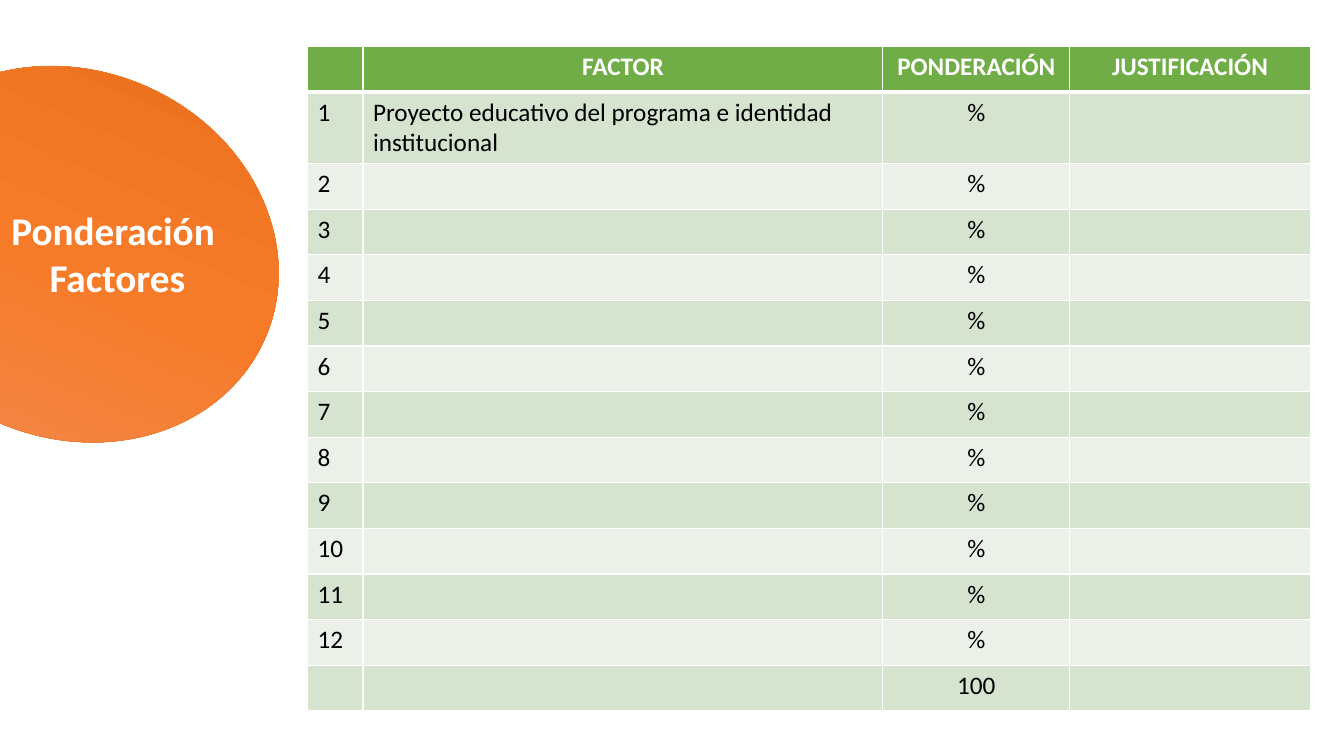
import copy
import lxml.etree
import pptx
import pptx.dml.color
import pptx.enum.shapes
import pptx.enum.text
import pptx.oxml.ns
import pptx.util

Cm = pptx.util.Cm
Pt = pptx.util.Pt
rgb = pptx.dml.color.RGBColor.from_string
qn = pptx.oxml.ns.qn
ALIGN = pptx.enum.text.PP_ALIGN

THEME = {
    "font": "Calibri",
    "title_size": 28,
    "table_size": 18,
    "white": "FFFFFF",
    "black": "000000",
    "header": "70AD47",
    "bands": ("D5E3CF", "EBF1E9"),
    "outline": "ED7D31",
    "gradient": ((0, "F18C57"), (0.5, "F67B28"), (1, "E56C19")),
}


def write(paragraph, text, size, color, bold, align):
    paragraph.alignment = align
    run = paragraph.add_run()
    run.text = text
    run.font.name = THEME["font"]
    run.font.size = Pt(size)
    run.font.bold = bold
    run.font.color.rgb = rgb(color)


def add_border(cell, side, width):
    line = lxml.etree.SubElement(cell._tc.get_or_add_tcPr(), qn("a:" + side), w=str(Pt(width)))
    fill = lxml.etree.SubElement(line, qn("a:solidFill"))
    lxml.etree.SubElement(fill, qn("a:srgbClr"), val=THEME["white"])


presentation = pptx.Presentation()
presentation.slide_width = Cm(33.87)
presentation.slide_height = Cm(19.05)
slide = presentation.slides.add_slide(presentation.slide_layouts[5])

rows = [("", "FACTOR", "PONDERACIÓN", "JUSTIFICACIÓN")]
rows += [(str(number), "", "%", "") for number in range(1, 13)]
rows[1] = ("1", "Proyecto educativo del programa e identidad institucional", "%", "")
rows.append(("", "", "100", ""))
widths = (1.4, 13.1, 4.71, 6.06)
heights = [1.15, 1.77] + [1.15] * 12

factors = slide.shapes.add_table(
    len(rows), len(widths), Cm(7.75), Cm(1.17), Cm(sum(widths)), Cm(sum(heights))
).table
for column, width in zip(factors.columns, widths):
    column.width = Cm(width)
for index, (texts, height) in enumerate(zip(rows, heights)):
    factors.rows[index].height = Cm(height)
    heading = index == 0
    background = THEME["header"] if heading else THEME["bands"][(index - 1) % 2]
    for position, text in enumerate(texts):
        cell = factors.cell(index, position)
        for side in ("lnL", "lnR", "lnT", "lnB"):
            thick = (index, side) in ((0, "lnB"), (1, "lnT"))
            add_border(cell, side, 3 if thick else 1)
        cell.fill.solid()
        cell.fill.fore_color.rgb = rgb(background)
        if text:
            write(
                cell.text_frame.paragraphs[0],
                text,
                THEME["table_size"],
                THEME["white"] if heading else THEME["black"],
                heading,
                ALIGN.CENTER if heading or position == 2 else ALIGN.LEFT,
            )

disc = slide.shapes.add_shape(
    pptx.enum.shapes.MSO_SHAPE.CHORD, Cm(-3.5), Cm(1.78), Cm(10.62), Cm(9.25)
)
disc.rotation = 203.3
disc.adjustments[0] = 26.92
disc.adjustments[1] = 162
disc.shadow.inherit = False
disc.line.color.rgb = rgb(THEME["outline"])
disc.line.width = Pt(0.5)
disc.fill.gradient()
disc.fill.gradient_angle = 270
stop_list = disc._element.spPr.find(qn("a:gradFill")).find(qn("a:gsLst"))
stop_list.append(copy.deepcopy(stop_list[-1]))
for stop, (place, color) in zip(disc.fill.gradient_stops, THEME["gradient"]):
    stop.position = place
    stop.color.rgb = rgb(color)

title = slide.shapes.title
title.left, title.top, title.width, title.height = Cm(0), Cm(5.08), Cm(5.92), Cm(2.64)
disc._element.addnext(title._element)
heading_frame = title.text_frame
heading_frame.word_wrap = False
heading_frame.auto_size = pptx.enum.text.MSO_AUTO_SIZE.SHAPE_TO_FIT_TEXT
heading_frame.vertical_anchor = pptx.enum.text.MSO_ANCHOR.TOP
heading_frame.add_paragraph()
for paragraph, words in zip(heading_frame.paragraphs, ("Ponderación ", "Factores")):
    paragraph.line_spacing = 1.0
    write(paragraph, words, THEME["title_size"], THEME["white"], True, ALIGN.CENTER)

presentation.save("out.pptx")
